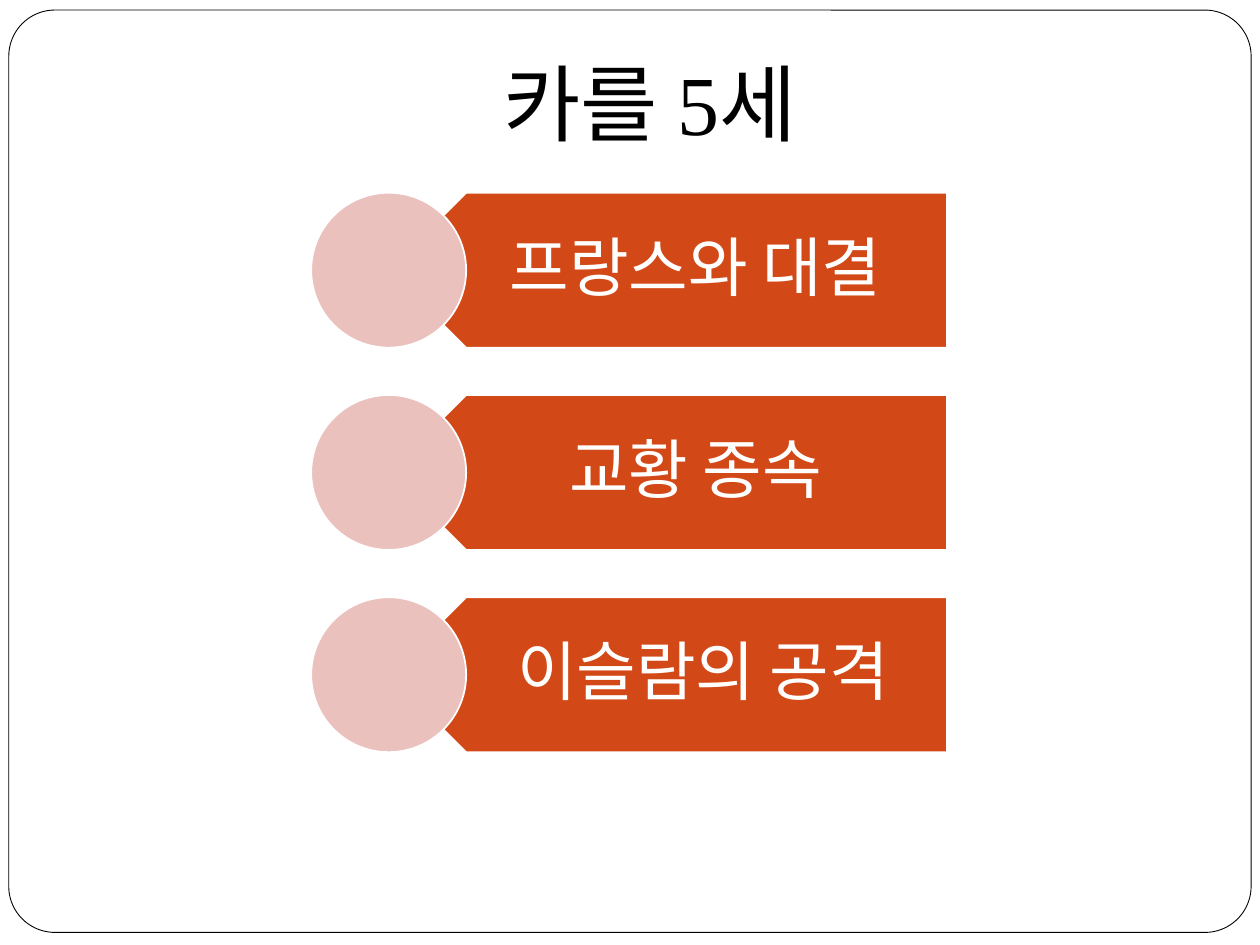
import pptx
import pptx.util
import pptx.dml.color
import pptx.enum.shapes
import pptx.enum.text
from dataclasses import dataclass

Pt = pptx.util.Pt
Kind = pptx.enum.shapes.MSO_SHAPE
Align = pptx.enum.text.PP_ALIGN
Anchor = pptx.enum.text.MSO_ANCHOR


@dataclass(frozen=True)
class Theme:
    font: str = "Times New Roman"
    ink: str = "000000"
    paper: str = "FFFFFF"
    bar: str = "D34817"
    disc: str = "EAC1BD"
    head: int = 48
    body: int = 37


def rgb(code):
    return pptx.dml.color.RGBColor.from_string(code)


def write(frame, text, font, size, color, align=Align.LEFT,
          anchor=Anchor.TOP, space=1.0, inset=(0.1, 0.05, 0.1, 0.05)):
    frame.word_wrap = True
    frame.vertical_anchor = anchor
    (frame.margin_left, frame.margin_top,
     frame.margin_right, frame.margin_bottom) = map(pptx.util.Inches, inset)
    para = frame.paragraphs[0]
    para.alignment = align
    para.line_spacing = space
    run = para.add_run()
    run.text = text
    run.font.name = font
    run.font.size = Pt(size)
    run.font.color.rgb = rgb(color)


class Page:
    """A slide on a grid of 100 columns by 75 rows."""

    def __init__(self, deck, theme):
        self.theme = theme
        self.slide = deck.slides.add_slide(deck.slide_layouts[6])
        self.col = deck.slide_width / 100
        self.row = deck.slide_height / 75

    def place(self, x, y, w, h):
        return (round(x * self.col), round(y * self.row),
                round(w * self.col), round(h * self.row))

    def shape(self, kind, box, fill, line, width, host=None):
        host = host or self.slide
        item = host.shapes.add_shape(kind, *self.place(*box))
        item.shadow.inherit = False
        item.fill.solid()
        item.fill.fore_color.rgb = rgb(fill)
        item.line.color.rgb = rgb(line)
        item.line.width = Pt(width)
        return item

    def text(self, text, box, host=None, **form):
        host = host or self.slide
        item = host.shapes.add_textbox(*self.place(*box))
        write(item.text_frame, text, font=self.theme.font, **form)

    def frame(self):
        item = self.shape(Kind.ROUNDED_RECTANGLE, (0.7, 0.8, 98.6, 73.2),
                          self.theme.paper, self.theme.ink, 0.5)
        item.adjustments[0] = 0.05

    def title(self, text):
        self.text(text, (39, 3.6, 37.8, 9.1),
                  size=self.theme.head, color=self.theme.ink)

    def points(self, items, left=24.7, top=15.3, size=12.3, pitch=16.05):
        look = self.theme
        group = self.slide.shapes.add_group_shape()
        for i, text in enumerate(items):
            y = top + i * pitch
            # Arrow bar, tip hidden behind the disc
            bar = self.shape(Kind.PENTAGON, (left + size / 2, y, 44.3, size),
                             look.bar, look.paper, 1, group)
            bar.rotation = 180
            # Label
            self.text(text, (left + size * 0.75, y, 41.2, size), group,
                      size=look.body, color=look.paper, align=Align.CENTER,
                      anchor=Anchor.MIDDLE, space=0.9,
                      inset=(0.54, 0.15, 0.29, 0.15))
            # Disc
            self.shape(Kind.OVAL, (left, y, size, size),
                       look.disc, look.paper, 1, group)


def main():
    deck = pptx.Presentation()
    deck.slide_width = pptx.util.Inches(10)
    deck.slide_height = pptx.util.Inches(7.5)
    page = Page(deck, Theme())
    page.frame()
    page.points(["프랑스와 대결 ", "교황 종속 ", "이슬람의 공격"])
    page.title("카를 5세")
    deck.save("out.pptx")


if __name__ == "__main__":
    main()
